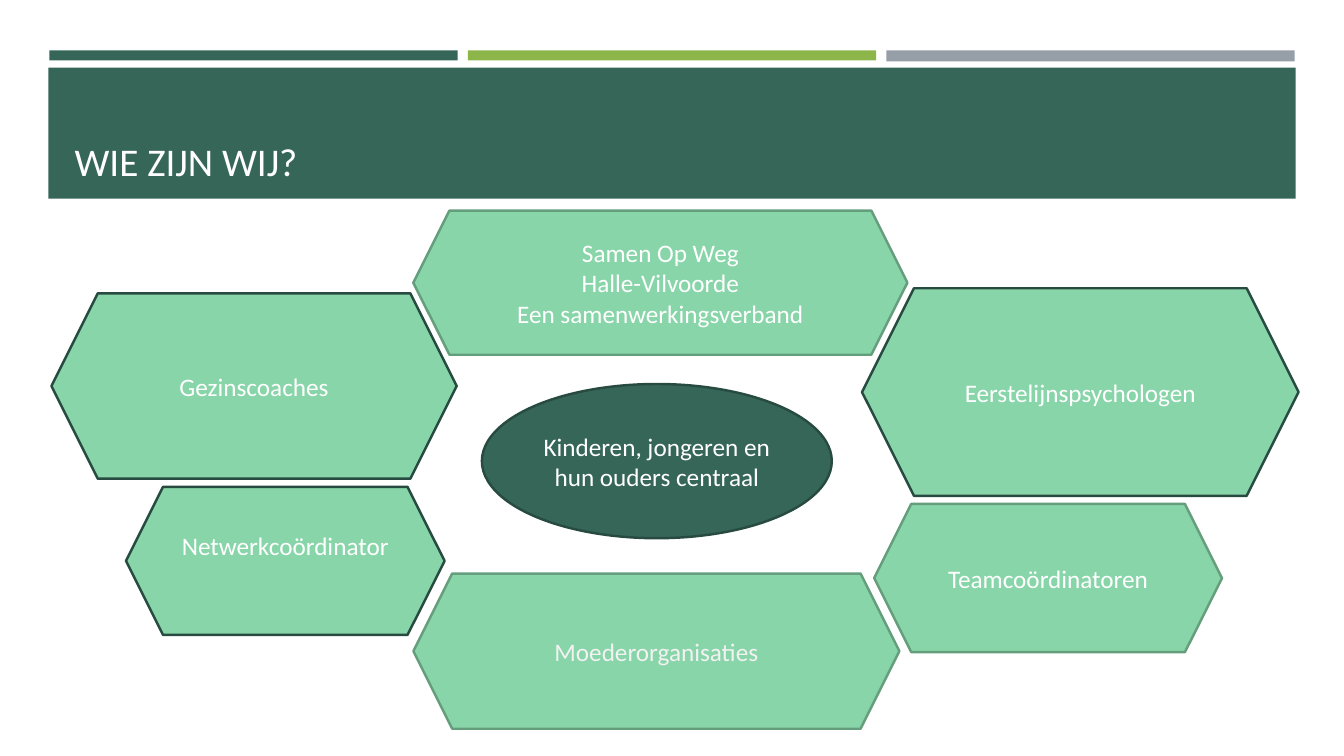
from dataclasses import dataclass

from pptx import Presentation
from pptx.dml.color import RGBColor
from pptx.enum.shapes import MSO_SHAPE
from pptx.enum.text import MSO_ANCHOR, MSO_AUTO_SIZE, PP_ALIGN
from pptx.shapes.autoshape import Shape
from pptx.slide import Slide
from pptx.text.text import TextFrame
from pptx.util import Inches, Pt

GREEN = RGBColor(0x36, 0x66, 0x58)
LIME = RGBColor(0x8C, 0xB6, 0x4A)
GREY = RGBColor(0x96, 0x9F, 0xA7)
MINT = RGBColor(0x88, 0xD5, 0xA9)
SAGE = RGBColor(0x65, 0x9E, 0x7D)
DARK = RGBColor(0x28, 0x4B, 0x41)
WHITE = RGBColor(0xFF, 0xFF, 0xFF)
PALE = RGBColor(0xF2, 0xF2, 0xF2)
CREAM = RGBColor(0xFF, 0xFE, 0xFF)


@dataclass(frozen=True)
class Box:
    left: float
    top: float
    width: float
    height: float


@dataclass(frozen=True)
class Node:
    text: str
    box: Box
    edge: RGBColor
    kind: MSO_SHAPE = MSO_SHAPE.HEXAGON
    fill: RGBColor = MINT
    ink: RGBColor = WHITE
    foot: float = 0.05


BANDS = [
    (Box(0.49, 0.5, 4.05, 0.1), GREEN),
    (Box(8.79, 0.5, 4.05, 0.11), GREY),
    (Box(4.64, 0.5, 4.05, 0.1), LIME),
    (Box(0.48, 0.67, 12.37, 1.3), GREEN),
]

NODES = [
    Node("Moederorganisaties", Box(4.1, 5.69, 4.82, 1.54), SAGE, ink=PALE),
    Node("Teamcoördinatoren", Box(8.67, 5, 3.45, 1.47), SAGE),
    Node("Gezinscoaches", Box(0.51, 2.91, 4.02, 1.84), DARK),
    Node("Eerstelijnspsychologen", Box(8.55, 2.86, 4.33, 2.06), DARK),
    Node("Samen Op Weg\vHalle-Vilvoorde\nEen samenwerkingsverband",
         Box(4.1, 2.09, 4.9, 1.43), SAGE),
    Node("Netwerkcoördinator", Box(1.25, 4.83, 3.16, 1.47), DARK, foot=0.35),
    Node("Kinderen, jongeren en hun ouders centraal",
         Box(4.78, 3.81, 3.47, 1.53), DARK, MSO_SHAPE.OVAL, GREEN),
]


def add_form(slide: Slide, kind: MSO_SHAPE, box: Box, fill: RGBColor) -> Shape:
    form = slide.shapes.add_shape(
        kind, Inches(box.left), Inches(box.top), Inches(box.width), Inches(box.height))
    form.shadow.inherit = False
    form.fill.solid()
    form.fill.fore_color.rgb = fill
    form.line.fill.background()
    return form


def set_text(frame: TextFrame, text: str, size: int, ink: RGBColor, align: PP_ALIGN) -> None:
    frame.text = text
    frame.word_wrap = True
    for line in frame.paragraphs:
        line.alignment = align
        line.font.name = "Calibri"
        line.font.size = Pt(size)
        line.font.color.rgb = ink


def add_title(slide: Slide, text: str, box: Box) -> None:
    title = slide.shapes.title
    title.left, title.top = Inches(box.left), Inches(box.top)
    title.width, title.height = Inches(box.width), Inches(box.height)
    set_text(title.text_frame, text, 28, CREAM, PP_ALIGN.LEFT)
    title.text_frame.auto_size = MSO_AUTO_SIZE.NONE
    title.text_frame.vertical_anchor = MSO_ANCHOR.BOTTOM


def add_node(slide: Slide, node: Node) -> None:
    form = add_form(slide, node.kind, node.box, node.fill)
    form.line.color.rgb = node.edge
    form.line.width = Pt(1.75)
    frame = form.text_frame
    set_text(frame, node.text, 18, node.ink, PP_ALIGN.CENTER)
    frame.vertical_anchor = MSO_ANCHOR.MIDDLE
    frame.margin_bottom = Inches(node.foot)


def main() -> None:
    deck = Presentation()
    deck.slide_width, deck.slide_height = Inches(13.33), Inches(7.5)
    slide = deck.slides.add_slide(deck.slide_layouts[5])
    add_title(slide, "WIE ZIJN WIJ?", Box(0.64, 0.77, 12.06, 1.11))
    for box, fill in BANDS:
        band = add_form(slide, MSO_SHAPE.RECTANGLE, box, fill)
        slide.shapes.title.element.addprevious(band.element)
    for node in NODES:
        add_node(slide, node)
    deck.save("out.pptx")


if __name__ == "__main__":
    main()
